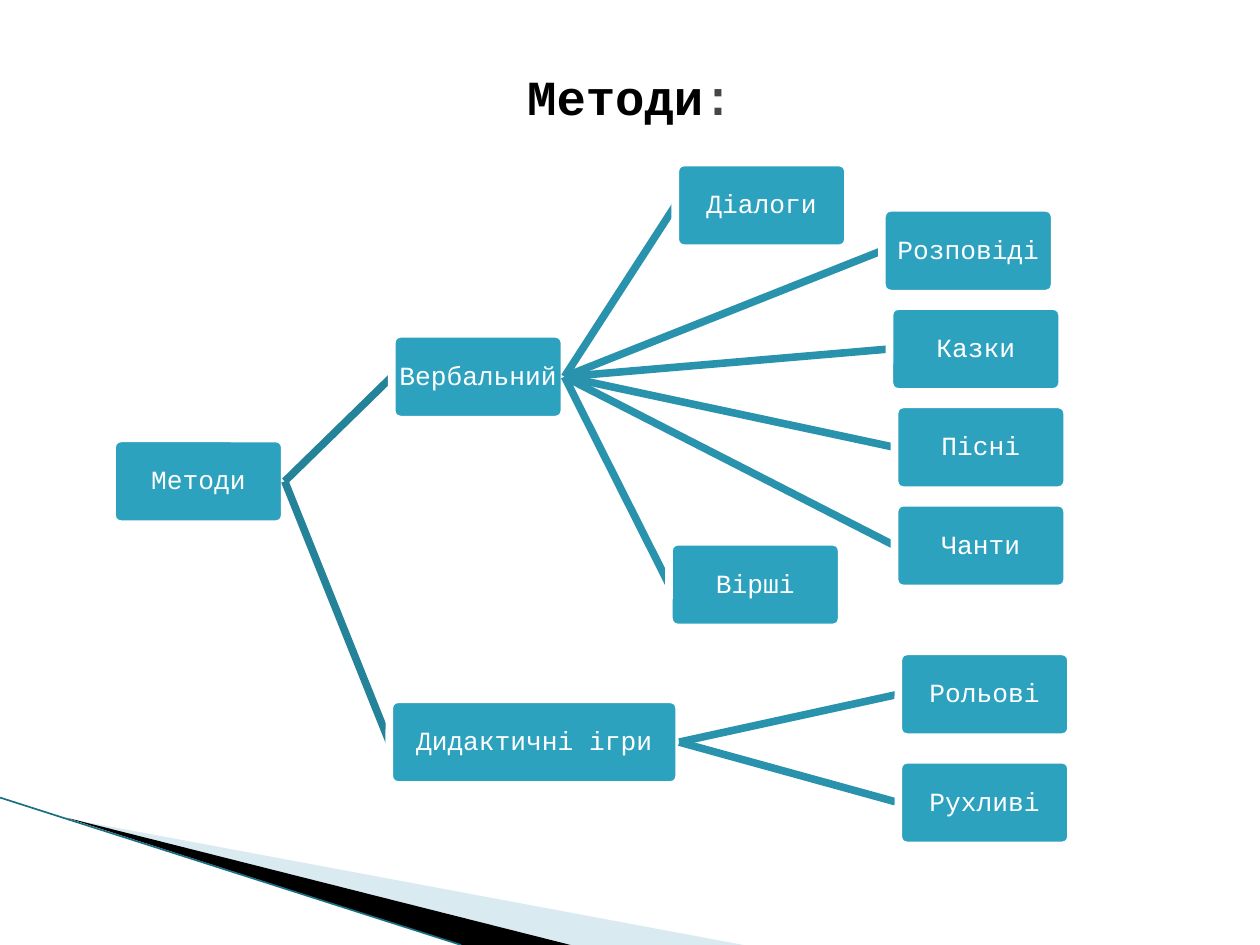
from dataclasses import dataclass

from lxml.etree import SubElement
from pptx import Presentation
from pptx.dml.color import RGBColor
from pptx.enum.shapes import MSO_CONNECTOR, MSO_SHAPE
from pptx.enum.text import MSO_ANCHOR, PP_ALIGN
from pptx.oxml.ns import qn
from pptx.util import Inches, Pt


@dataclass(frozen=True)
class Theme:
    font: str = "Courier New"
    title_size: float = 28
    node_size: float = 15
    line_width: float = 4.33
    edge_width: float = 0.95
    node: str = "2DA2BF"
    branches: tuple = ("248299", "2993AD")
    white: str = "FFFFFF"
    black: str = "000000"
    grey: str = "464646"
    pale: str = "A0CBDC"
    edge: str = "1B6F84"


@dataclass(frozen=True)
class Box:
    left: float
    top: float
    width: float
    height: float

    def inside(self, column, row, width, height):
        return Box(self.left + column, self.top + row, width, height)

    def emu(self):
        return [grid(value) for value in (self.left, self.top, self.width, self.height)]


@dataclass(frozen=True)
class Node:
    label: str
    column: float
    row: float
    children: tuple = ()
    width: float = 13.7
    height: float = 6.8


THEME = Theme()
COLUMNS, ROWS = 100, 75
CELL = 0.1

METHODS = Node("Методи", 0, 21.9, (
    Node("Вербальний", 22.2, 13.6, (
        Node("Діалоги", 44.7, 0),
        Node("Розповіді", 61.1, 3.6),
        Node("Казки", 61.7, 11.4),
        Node("Пісні", 62.1, 19.2),
        Node("Вірші", 44.2, 30.1),
        Node("Чанти", 62.1, 27),
    )),
    Node("Дидактичні ігри", 22, 42.6, (
        Node("Рольові", 62.4, 38.8),
        Node("Рухливі", 62.4, 47.4),
    ), width=23),
))


def grid(value):
    return Inches(value * CELL)


def color(name):
    return RGBColor.from_string(name)


def add_run(para, text, size, ink, bold=False):
    span = para.add_run()
    span.text = text
    span.font.name = THEME.font
    span.font.size = Pt(size)
    span.font.bold = bold
    span.font.color.rgb = color(ink)


def add_line(page, start, end, ink, width):
    points = [grid(value) for value in (*start, *end)]
    line = page.shapes.add_connector(MSO_CONNECTOR.STRAIGHT, *points)
    line.line.color.rgb = color(ink)
    line.line.width = Pt(width)
    SubElement(line._element.spPr, qn("a:effectLst"))


def add_wedge(page, box, points, fill, opacity=100):
    corners = [(grid(box.left + x), grid(box.top + y)) for x, y in points]
    builder = page.shapes.build_freeform(*corners[0])
    builder.add_line_segments(corners[1:], close=True)
    wedge = builder.convert_to_shape()
    wedge.shadow.inherit = False
    wedge.fill.solid()
    wedge.fill.fore_color.rgb = color(fill)
    wedge.line.fill.background()
    if opacity < 100:
        tint = wedge._element.spPr.find(qn("a:solidFill"))[0]
        SubElement(tint, qn("a:alpha"), val=str(opacity * 1000))


def add_corner(page, box):
    bottom = box.height
    add_wedge(page, box, [(5.5, 1.7), (59, bottom), (45.3, bottom)], THEME.pale, 40)
    add_wedge(page, box, [(5.3, 1.6), (45.3, bottom), (36.6, bottom)], THEME.black)
    add_line(page, (box.left, box.top), (box.left + 36.6, box.top + bottom),
             THEME.edge, THEME.edge_width)


def add_title(page, box):
    title = page.shapes.title
    title.left, title.top, title.width, title.height = box.emu()
    title.text_frame.vertical_anchor = MSO_ANCHOR.MIDDLE
    para = title.text_frame.paragraphs[0]
    para.alignment = PP_ALIGN.CENTER
    add_run(para, "Методи", THEME.title_size, THEME.black, True)
    add_run(para, ":", THEME.title_size, THEME.grey, True)


def add_node(page, box, label):
    shape = page.shapes.add_shape(MSO_SHAPE.ROUNDED_RECTANGLE, *box.emu())
    shape.adjustments[0] = 0.1
    shape.shadow.inherit = False
    shape.fill.solid()
    shape.fill.fore_color.rgb = color(THEME.node)
    shape.line.color.rgb = color(THEME.white)
    shape.line.width = Pt(THEME.line_width)
    frame = shape.text_frame
    frame.word_wrap = True
    frame.vertical_anchor = MSO_ANCHOR.MIDDLE
    frame.margin_left = frame.margin_right = grid(0.1)
    frame.margin_top = frame.margin_bottom = grid(0.1)
    para = frame.paragraphs[0]
    para.alignment = PP_ALIGN.CENTER
    para.line_spacing = 0.9
    add_run(para, label, THEME.node_size, THEME.white)


def add_tree(page, area, node, origin=None, level=0):
    box = area.inside(node.column, node.row, node.width, node.height)
    middle = box.top + box.height / 2
    if origin:
        add_line(page, origin, (box.left, middle),
                 THEME.branches[level - 1], THEME.line_width)
    add_node(page, box, node.label)
    for child in node.children:
        add_tree(page, area, child, (box.left + box.width, middle), level + 1)


def main():
    deck = Presentation()
    deck.slide_width, deck.slide_height = grid(COLUMNS), grid(ROWS)
    page = deck.slides.add_slide(deck.slide_layouts[5])
    add_corner(page, Box(0, 63.3, 59, 11.7))
    add_title(page, Box(5, 3, 90, 9.3))
    add_tree(page, Box(8.9, 12.9, 76.1, 54.2), METHODS)
    deck.save("out.pptx")


if __name__ == "__main__":
    main()
